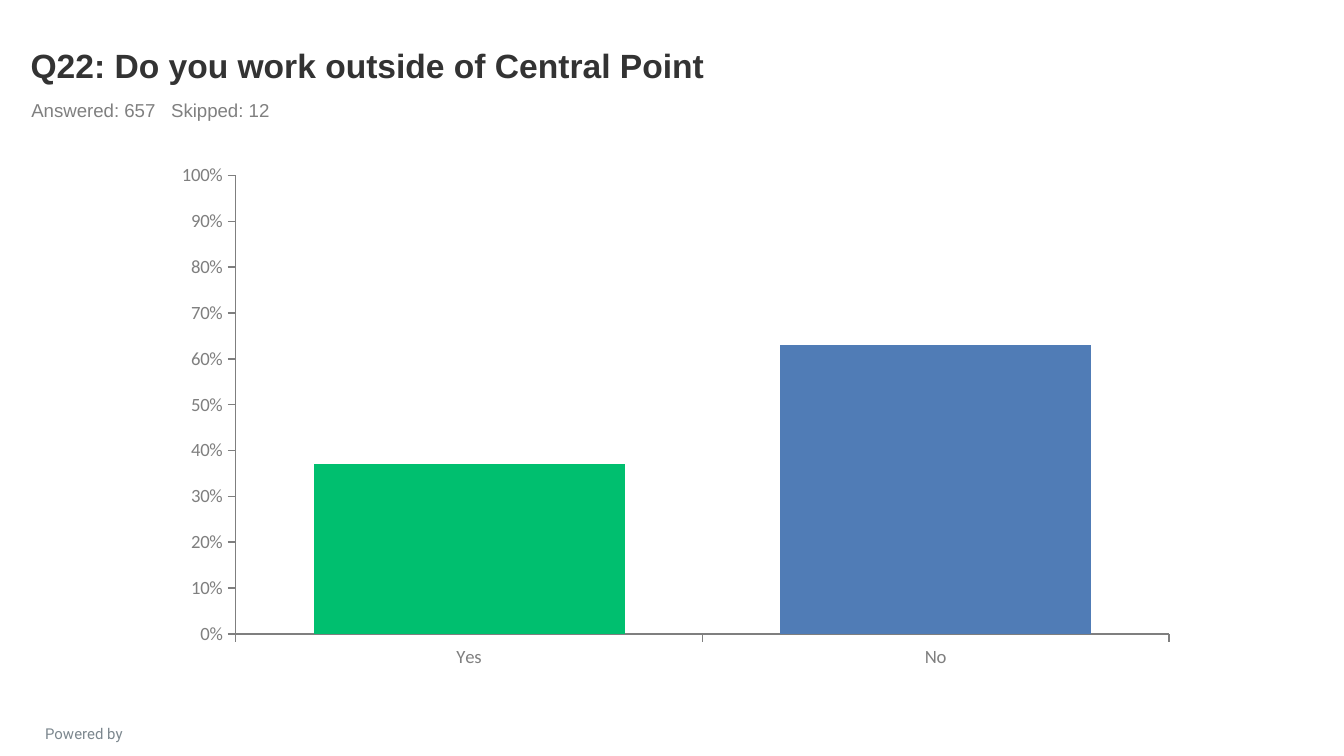
from dataclasses import dataclass

import pptx
import pptx.chart.data
import pptx.dml.color
import pptx.enum.chart
import pptx.enum.text
import pptx.util
from lxml import etree


@dataclass(frozen=True)
class Theme:
    heading: str = "333333"
    muted: str = "808080"
    axis: str = "7F7F7F"
    footer: str = "7C878E"
    bars: tuple = ("00BF6F", "507CB6")
    text_font: str = "Arial"
    chart_font: str = "Calibri"
    footer_font: str = "Roboto"
    title_size: int = 18
    label_size: int = 10
    footer_size: int = 8


CELL = 0.1  # inches per grid column and row
COLUMNS, ROWS = 100, 56.25


def grid(*cells):
    return [pptx.util.Inches(cell * CELL) for cell in cells]


def rgb(color):
    return pptx.dml.color.RGBColor.from_string(color)


class SurveySlide:
    def __init__(self, deck, theme):
        self.theme = theme
        self.slide = deck.slides.add_slide(deck.slide_layouts[6])

    def style(self, font, name, size, color, bold=False):
        font.name = name
        font.size = pptx.util.Pt(size)
        font.color.rgb = rgb(color)
        font.bold = bold

    def text(self, area, wording, name, size, color, bold=False,
             anchor="TOP", align="LEFT", tab=None):
        """Add one line of text; tab is a tab stop in grid columns."""
        frame = self.slide.shapes.add_textbox(*grid(*area)).text_frame
        frame.word_wrap = True
        frame.vertical_anchor = pptx.enum.text.MSO_ANCHOR[anchor]
        line = frame.paragraphs[0]
        line.text = wording
        line.alignment = pptx.enum.text.PP_ALIGN[align]
        if tab:
            namespace = "{http://schemas.openxmlformats.org/drawingml/2006/main}"
            properties = line._p.get_or_add_pPr()
            stops = etree.SubElement(properties, namespace + "tabLst")
            etree.SubElement(stops, namespace + "tab",
                             pos=str(grid(tab)[0]), algn="l")
        self.style(line.font, name, size, color, bold)

    def axis(self, axis):
        axis.has_major_gridlines = False
        axis.major_tick_mark = pptx.enum.chart.XL_TICK_MARK.OUTSIDE
        axis.minor_tick_mark = pptx.enum.chart.XL_TICK_MARK.NONE
        axis.format.line.color.rgb = rgb(self.theme.axis)
        axis.format.line.width = pptx.util.Pt(0.75)
        self.style(axis.tick_labels.font, self.theme.chart_font,
                   self.theme.label_size, self.theme.axis)

    def column_chart(self, area, answers):
        shares = pptx.chart.data.CategoryChartData(number_format="0%")
        shares.categories = list(answers)
        shares.add_series("Series 1", list(answers.values()))
        chart = self.slide.shapes.add_chart(
            pptx.enum.chart.XL_CHART_TYPE.COLUMN_CLUSTERED,
            *grid(*area), shares).chart
        chart.has_legend = False
        chart.has_title = False
        self.style(chart.font, self.theme.chart_font,
                   self.theme.title_size, self.theme.heading)

        self.axis(chart.category_axis)
        chart.category_axis.tick_label_position = (
            pptx.enum.chart.XL_TICK_LABEL_POSITION.LOW)
        self.axis(chart.value_axis)
        chart.value_axis.minimum_scale = 0
        chart.value_axis.maximum_scale = 1
        chart.value_axis.major_unit = 0.1
        chart.value_axis.tick_labels.number_format = "0%"
        chart.value_axis.tick_labels.number_format_is_linked = False

        plot = chart.plots[0]
        plot.gap_width = 50
        plot.overlap = 100
        plot.vary_by_categories = False
        series = plot.series[0]
        series.invert_if_negative = False
        fills = [series.format.fill]
        fills += [series.points[i].format.fill for i in range(len(answers))]
        for fill, color in zip(fills, self.theme.bars[:1] + self.theme.bars):
            fill.solid()
            fill.fore_color.rgb = rgb(color)


def main():
    theme = Theme()
    deck = pptx.Presentation()
    deck.slide_width, deck.slide_height = grid(COLUMNS, ROWS)
    survey = SurveySlide(deck, theme)
    survey.text((0.5, 53.45, 11.5, 1.8), "Powered by", theme.footer_font,
                theme.footer_size, theme.footer, align="CENTER")
    survey.text((1.3, 0.85, 90, 6), "Q22: Do you work outside of Central Point",
                theme.text_font, theme.title_size, theme.heading,
                bold=True, anchor="BOTTOM")
    survey.text((1.35, 6.9, 90, 2.6), "Answered: 657\tSkipped: 12",
                theme.text_font, theme.label_size, theme.muted, tab=10.4)
    survey.column_chart((12, 11.5, 76.5, 39), {"Yes": 0.37, "No": 0.63})
    deck.save("out.pptx")


if __name__ == "__main__":
    main()
